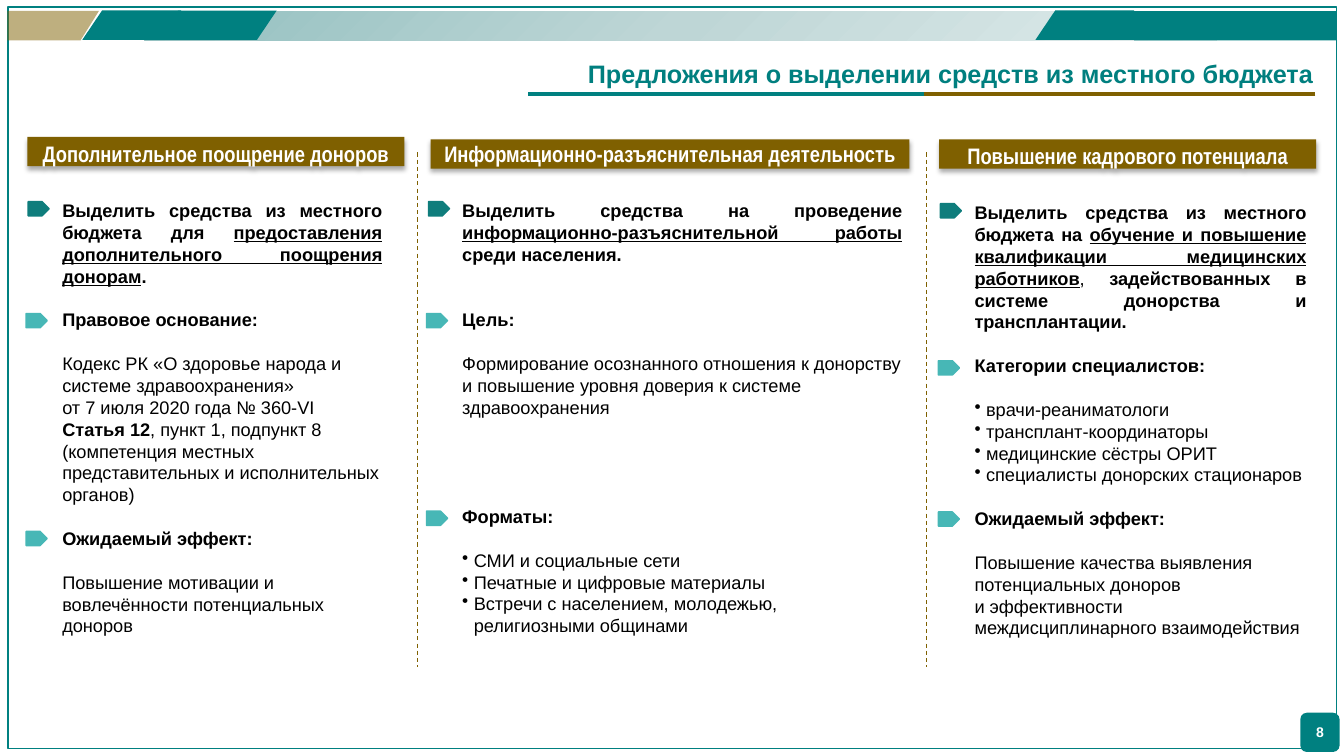
import pptx
import pptx.util
import pptx.dml.color
import pptx.enum.dml
import pptx.enum.shapes
import pptx.enum.text
import pptx.oxml
import pptx.oxml.ns

Cm, Pt = pptx.util.Cm, pptx.util.Pt
SHAPE = pptx.enum.shapes.MSO_SHAPE
ALIGN = pptx.enum.text.PP_ALIGN
ANCHOR = pptx.enum.text.MSO_ANCHOR
NAMESPACE = pptx.oxml.ns.nsdecls("a")
TEAL, BROWN, DARK_TEAL, LIGHT_TEAL = "008080", "7F6000", "0F7D7C", "47B7B6"
LINE_HEIGHT = 15.6

# Each column: header box, header spacing, text box, marker left, marker tops,
# lead spans, sections (blank lines above, heading, body paragraphs).
# A span is a text and its style: b = bold, u = underlined.
COLUMNS = [
    dict(
        title="Дополнительное поощрение доноров",
        header=(0.69, 3.45, 9.5, 0.74), spacing=1.15,
        body=(1.32, 4.9, 8.56, 11.38),
        marker_left=0.69, marker_tops=(5.08, 7.9, 13.39),
        lead=[("Выделить средства из местного бюджета для ", "b"),
              ("предоставления дополнительного поощрения донорам", "bu"),
              (".", "b")],
        sections=[
            (1, "Правовое основание:", [
                [("Кодекс РК «О здоровье народа и системе здравоохранения»", "")],
                [("от 7 июля 2020 года № 360-VI", "")],
                [("Статья 12", "b"),
                 (", пункт 1, подпункт 8 (компетенция местных "
                  "представительных и исполнительных органов)", "")]]),
            (1, "Ожидаемый эффект:", [
                [("Повышение мотивации и вовлечённости потенциальных доноров", "")]]),
        ]),
    dict(
        title="Информационно-разъяснительная деятельность",
        header=(10.85, 3.51, 12.07, 0.74), spacing=1.0,
        body=(11.4, 4.9, 11.58, 11.38),
        marker_left=10.78, marker_tops=(5.08, 7.9, 12.88),
        lead=[("Выделить средства на проведение ", "b"),
              ("информационно-разъяснительной работы ", "bu"),
              ("среди населения.", "b")],
        sections=[
            (2, "Цель:", [
                [("Формирование осознанного отношения к донорству и повышение "
                  "уровня доверия к системе здравоохранения", "")]]),
            (4, "Форматы:", [
                [("• СМИ и социальные сети", "")],
                [("• Печатные и цифровые материалы", "")],
                [("• Встречи с населением, молодежью, религиозными общинами", "")]]),
        ]),
    dict(
        title="Повышение кадрового потенциала",
        header=(23.67, 3.51, 9.5, 0.74), spacing=1.15,
        body=(24.31, 4.95, 8.86, 11.38),
        marker_left=23.68, marker_tops=(5.13, 9.09, 12.9),
        lead=[("Выделить средства из местного бюджета на ", "b"),
              ("обучение и повышение квалификации медицинских работников", "bu"),
              (", ", ""),
              ("задействованных в системе донорства и трансплантации.", "b")],
        sections=[
            (1, "Категории специалистов:", [
                [("• врачи-реаниматологи", "")],
                [("• трансплант-координаторы", "")],
                [("• медицинские сёстры ОРИТ", "")],
                [("• специалисты донорских стационаров", "")]]),
            (1, "Ожидаемый эффект:", [
                [("Повышение качества выявления потенциальных доноров", "")],
                [("и эффективности междисциплинарного взаимодействия", "")]]),
        ]),
]


def color(value):
    return pptx.dml.color.RGBColor.from_string(value)


def add_block(page, kind, box, fill=None, line=None):
    block = page.shapes.add_shape(kind, *map(Cm, box))
    block.shadow.inherit = False
    if fill:
        block.fill.solid()
        block.fill.fore_color.rgb = color(fill)
    else:
        block.fill.background()
    if line:
        block.line.color.rgb = color(line)
        block.line.width = Pt(1)
    else:
        block.line.fill.background()
    return block


def add_line(page, start, end, stroke, width, dashed=False):
    line = page.shapes.add_connector(
        pptx.enum.shapes.MSO_CONNECTOR.STRAIGHT, *map(Cm, start + end))
    line.line.color.rgb = color(stroke)
    line.line.width = Pt(width)
    if dashed:
        line.line.dash_style = pptx.enum.dml.MSO_LINE.DASH
    line._element.spPr.append(pptx.oxml.parse_xml(f"<a:effectLst {NAMESPACE}/>"))


def style_font(font, size, ink, name="Arial", bold=True):
    font.name, font.size, font.bold = name, Pt(size), bold
    font.color.rgb = color(ink)


def write_label(shape, text, size, ink, align, name="Arial", spacing=1.0,
                anchor=ANCHOR.MIDDLE):
    frame = shape.text_frame
    frame.word_wrap = True
    frame.vertical_anchor = anchor
    frame.text = text
    para = frame.paragraphs[0]
    para.alignment, para.line_spacing = align, spacing
    style_font(para.runs[0].font, size, ink, name)


def add_banner(page):
    """Frame and the decorated strip along the top edge."""
    add_block(page, SHAPE.RECTANGLE, (0.2, 0.18, 33.48, 18.69), line=TEAL)
    strip = add_block(page, SHAPE.RECTANGLE, (3.63, 0.28, 27.03, 0.74), TEAL)
    stops = "".join(
        f'<a:gs pos="{position}"><a:srgbClr val="{shade}"/></a:gs>'
        for position, shade in ((0, "93C0C0"), (50000, "BED6D6"), (100000, "DFEBEB")))
    properties = strip._element.spPr
    properties.replace(
        properties.find(pptx.oxml.ns.qn("a:solidFill")),
        pptx.oxml.parse_xml(f'<a:gradFill {NAMESPACE} rotWithShape="1"><a:gsLst>{stops}'
                            '</a:gsLst><a:lin ang="2700000" scaled="0"/></a:gradFill>'))
    for left, top, length, turn, fill in (
            (0.97, -0.51, 2.31, 90, BROWN), (2.95, -0.61, 2.49, 270, TEAL),
            (5.36, -0.61, 2.49, 90, TEAL), (26.97, -0.61, 2.49, 270, TEAL)):
        flag = add_block(page, SHAPE.FLOWCHART_MANUAL_INPUT, (left, top, 0.74, length), fill)
        flag.rotation = turn
        flag._element.spPr.find(pptx.oxml.ns.qn("a:xfrm")).set("flipH", "1")
        if fill == BROWN:
            tint = flag._element.spPr.find(".//" + pptx.oxml.ns.qn("a:srgbClr"))
            tint.append(pptx.oxml.parse_xml(f'<a:alpha {NAMESPACE} val="50000"/>'))
    add_block(page, SHAPE.RECTANGLE, (28.58, 0.28, 5.11, 0.74), TEAL)


def add_title(page, box):
    title = page.shapes.add_textbox(*map(Cm, box))
    write_label(title, "Предложения о выделении средств из местного бюджета",
                18, "007F7F", ALIGN.RIGHT, spacing=0.9, anchor=ANCHOR.BOTTOM)
    base = box[1] + box[3]
    add_line(page, (33.15, base), (23.16, base), BROWN, 2.25)
    add_line(page, (23.29, base), (13.31, base), TEAL, 2.25)


def add_header(page, box, title, spacing):
    header = add_block(page, SHAPE.RECTANGLE, box, BROWN)
    effects = header._element.spPr.find(pptx.oxml.ns.qn("a:effectLst"))
    effects.append(pptx.oxml.parse_xml(
        f'<a:outerShdw {NAMESPACE} blurRad="{Pt(3.5)}" dist="{Pt(2.2)}" dir="5400000" '
        'rotWithShape="0"><a:srgbClr val="000000"><a:alpha val="32000"/></a:srgbClr>'
        '</a:outerShdw>'))
    write_label(header, title, 16, "FFFFFF", ALIGN.CENTER, "Arial Narrow", spacing)


def write_para(para, spans, blank_lines=0):
    """Fill a paragraph; a leading bullet sign becomes a real bullet."""
    if spans[0][0].startswith("• "):
        spans = [(spans[0][0][2:], spans[0][1])] + spans[1:]
        properties = para._p.get_or_add_pPr()
        properties.set("marL", str(Cm(0.29)))
        properties.set("indent", str(Cm(-0.29)))
        properties.append(pptx.oxml.parse_xml(f'<a:buChar {NAMESPACE} char="•"/>'))
    if blank_lines:
        para.space_before = Pt(blank_lines * LINE_HEIGHT)
    for text, style in spans:
        span = para.add_run()
        span.text = text
        style_font(span.font, 13, "000000", bold="b" in style)
        if "u" in style:
            span.font.underline = True


def add_column(page, column):
    add_header(page, column["header"], column["title"], column["spacing"])
    frame = page.shapes.add_textbox(*map(Cm, column["body"])).text_frame
    frame.word_wrap = True
    lead = frame.paragraphs[0]
    lead.alignment = ALIGN.JUSTIFY
    write_para(lead, column["lead"])
    for blank_lines, heading, body in column["sections"]:
        write_para(frame.add_paragraph(), [(heading, "b")], blank_lines)
        for index, spans in enumerate(body):
            write_para(frame.add_paragraph(), spans, 0 if index else 1)
    for index, top in enumerate(column["marker_tops"]):
        shade, shift = (LIGHT_TEAL, -0.03) if index else (DARK_TEAL, 0.02)
        add_block(page, SHAPE.PENTAGON,
                  (column["marker_left"] + shift, top, 0.53, 0.36), shade, shade)


def add_page_number(page, box):
    badge = add_block(page, SHAPE.ROUNDED_RECTANGLE, box, TEAL)
    write_label(badge, "8", 10, "FFFFFF", ALIGN.CENTER)


def main():
    deck = pptx.Presentation()
    deck.slide_width, deck.slide_height = Cm(33.87), Cm(19.05)
    page = deck.slides.add_slide(deck.slide_layouts[6])
    add_banner(page)
    add_title(page, (8.94, 1.63, 24.41, 0.74))
    for column in COLUMNS:
        add_column(page, column)
    for left in (10.52, 23.34):
        add_line(page, (left, 3.84), (left, 16.81), BROWN, 0.75, dashed=True)
    add_page_number(page, (32.77, 17.96, 0.99, 0.99))
    deck.save("out.pptx")


if __name__ == "__main__":
    main()
